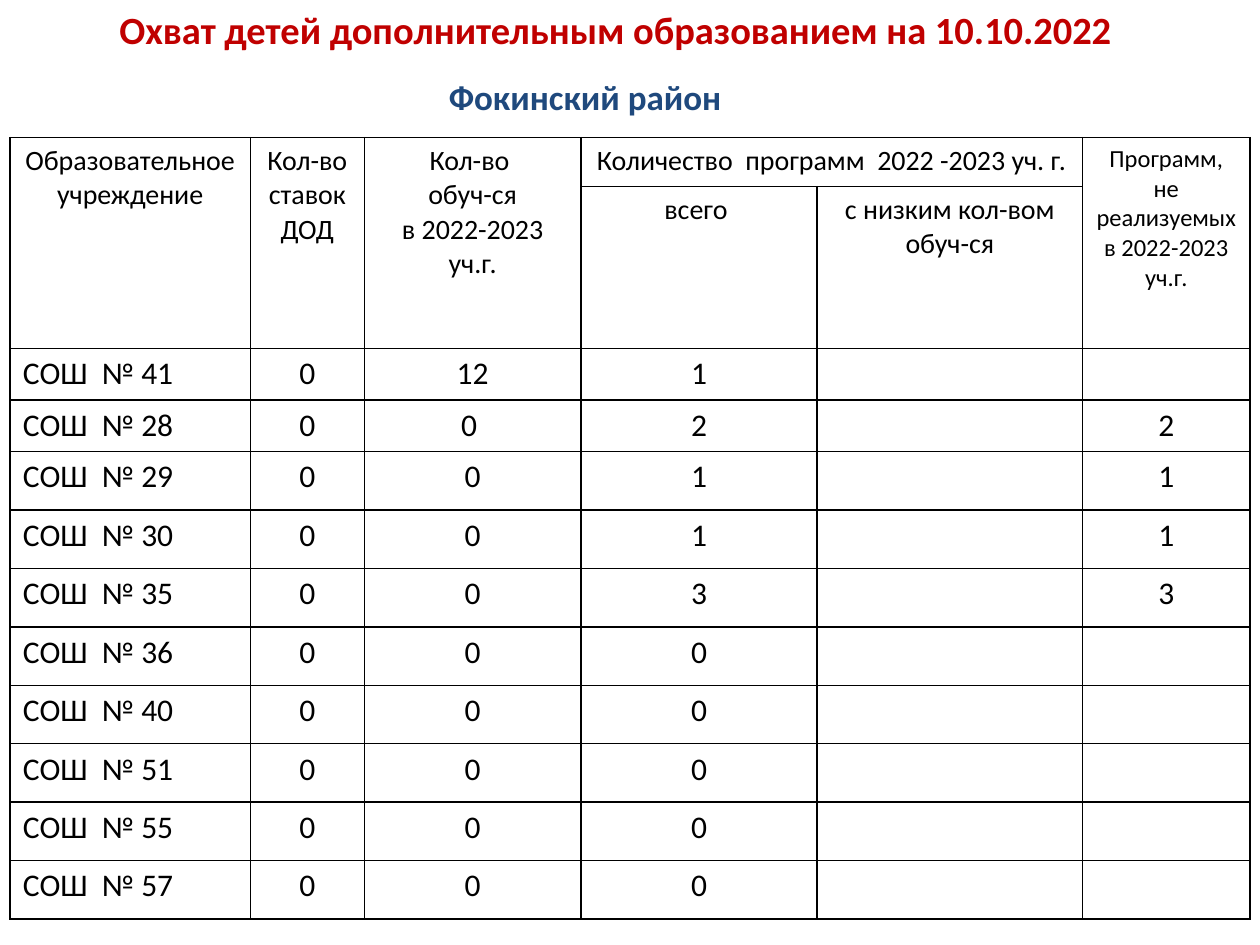
from lxml import etree
from pptx import Presentation
from pptx.dml.color import RGBColor
from pptx.enum.text import PP_ALIGN
from pptx.oxml.ns import qn
from pptx.util import Pt

LEFT, CENTER = PP_ALIGN.LEFT, PP_ALIGN.CENTER
BLACK = RGBColor(0, 0, 0)
WHITE = RGBColor(255, 255, 255)
RED = RGBColor(0xC0, 0, 0)
NAVY = RGBColor(0x1F, 0x49, 0x7D)
FONT = "Calibri"

TITLE = "Охват детей дополнительным образованием на 10.10.2022 "
DISTRICT = "Фокинский район"
# row, column, rows spanned, columns spanned, text, size
HEADERS = [
    (0, 0, 2, 1, "Образовательное учреждение", 16),
    (0, 1, 2, 1, "Кол-во ставок ДОД", 16),
    (0, 2, 2, 1, "Кол-во \nобуч-ся\nв 2022-2023 уч.г.", 16),
    (0, 3, 1, 2, "Количество  программ  2022 -2023 уч. г.", 16),
    (0, 5, 2, 1, "Программ, не реализуемых в 2022-2023 уч.г.", 14),
    (1, 3, 1, 1, "всего ", 16),
    (1, 4, 1, 1, "с низким кол-вом обуч-ся", 16),
]
SCHOOLS = [
    ("СОШ  № 41", "0", "12", "1", "", ""),
    ("СОШ  № 28", "0", "0 ", "2", "", "2"),
    ("СОШ  № 29", "0", "0", "1", "", "1"),
    ("СОШ  № 30", "0", "0", "1", "", "1"),
    ("СОШ  № 35", "0", "0", "3", "", "3"),
    ("СОШ  № 36", "0", "0", "0", "", ""),
    ("СОШ  № 40", "0", "0", "0", "", ""),
    ("СОШ  № 51", "0", "0", "0", "", ""),
    ("СОШ  № 55", "0", "0", "0", "", ""),
    ("СОШ  № 57", "0", "0", "0", "", ""),
]
COLUMN_WIDTHS = [137.2, 65.2, 123.8, 135, 151.6, 95.8]
ROW_HEIGHTS = [28, 92, 29.5, 29.5] + [33.4] * 8


def write(frame, text, size, color=BLACK, bold=False, align=CENTER):
    for index, line in enumerate(text.split("\n")):
        para = frame.paragraphs[0] if index == 0 else frame.add_paragraph()
        para.alignment = align
        para.font.size = Pt(size)
        span = para.add_run()
        span.text = line
        span.font.name = FONT
        span.font.size = Pt(size)
        span.font.bold = bold
        span.font.color.rgb = color


def add_heading(page, text, left, top, width, height, **style):
    box = page.shapes.add_textbox(Pt(left), Pt(top), Pt(width), Pt(height))
    box.text_frame.word_wrap = True
    write(box.text_frame, text, bold=True, **style)


def style_cell(cell):
    """Give the cell a white fill and thin black borders."""
    properties = cell._tc.get_or_add_tcPr()
    for side in ("a:lnL", "a:lnR", "a:lnT", "a:lnB"):
        line = etree.SubElement(properties, qn(side), w=str(Pt(1)))
        fill = etree.SubElement(line, qn("a:solidFill"))
        etree.SubElement(fill, qn("a:srgbClr"), val=str(BLACK))
    cell.fill.solid()
    cell.fill.fore_color.rgb = WHITE


def add_coverage_table(page):
    table = page.shapes.add_table(
        len(ROW_HEIGHTS), len(COLUMN_WIDTHS), Pt(5.8), Pt(78.7),
        Pt(sum(COLUMN_WIDTHS)), Pt(sum(ROW_HEIGHTS))).table
    table.first_row = table.horz_banding = False
    for column, width in zip(table.columns, COLUMN_WIDTHS):
        column.width = Pt(width)
    for row, height in zip(table.rows, ROW_HEIGHTS):
        row.height = Pt(height)
    for cell in table.iter_cells():
        style_cell(cell)

    for row, column, rows, columns, text, size in HEADERS:
        cell = table.cell(row, column)
        if rows * columns > 1:
            cell.merge(table.cell(row + rows - 1, column + columns - 1))
        write(cell.text_frame, text, size)
    for row, values in enumerate(SCHOOLS, start=2):
        for column, text in enumerate(values):
            write(table.cell(row, column).text_frame, text, 18,
                  align=CENTER if column else LEFT)


def main():
    deck = Presentation()
    deck.slide_width, deck.slide_height = Pt(720), Pt(540)
    page = deck.slides.add_slide(deck.slide_layouts[6])
    add_coverage_table(page)
    add_heading(page, DISTRICT, 224.6, 39.6, 219.6, 31.5, size=20, color=NAVY)
    add_heading(page, TITLE, 0, 0, 708.5, 33.9, size=22, color=RED)
    deck.save("out.pptx")


if __name__ == "__main__":
    main()
